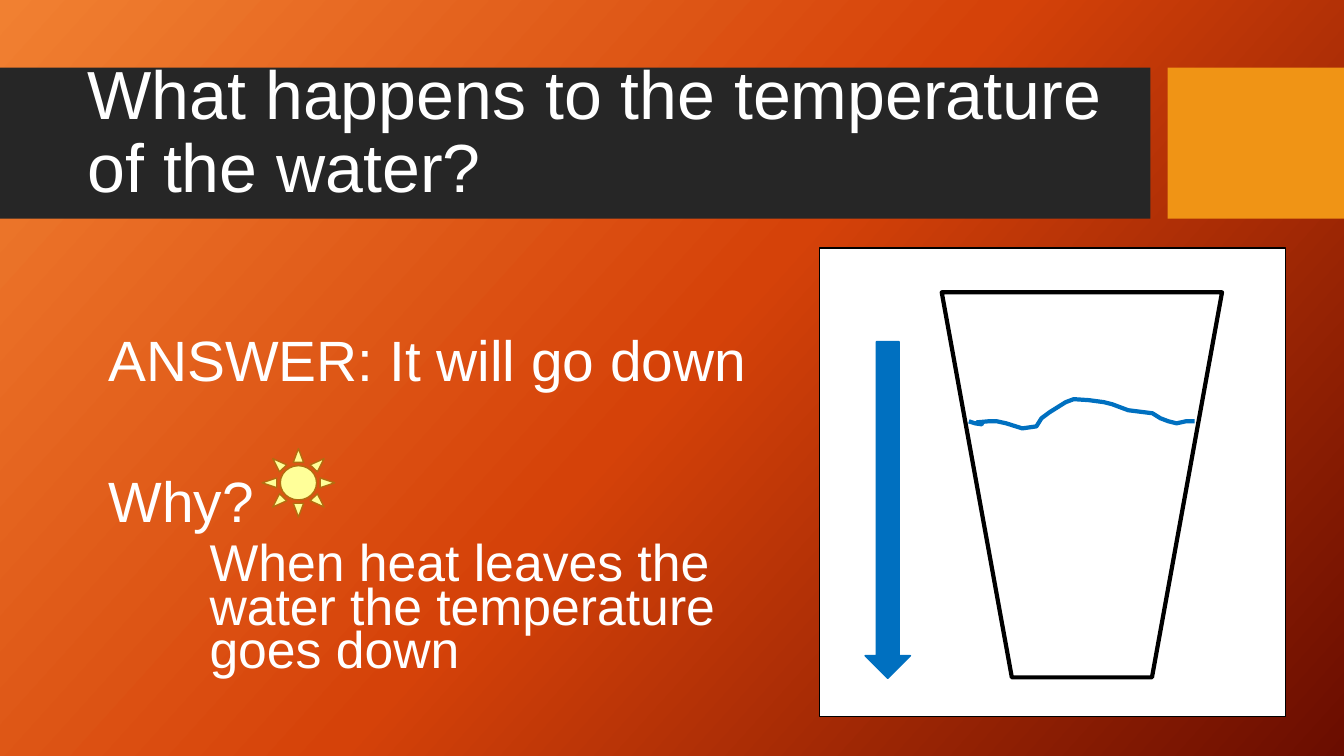
"""Build the slide about the temperature of cooling water."""
import copy
from dataclasses import dataclass
from typing import Optional

import pptx
import pptx.dml.color
import pptx.enum.shapes
import pptx.enum.text
import pptx.oxml.ns
import pptx.util

Inches = pptx.util.Inches
Pt = pptx.util.Pt
Kind = pptx.enum.shapes.MSO_SHAPE
Anchor = pptx.enum.text.MSO_ANCHOR

COLORS = {
    "glow": "F18031", "flame": "D54209", "ember": "6A0D00",
    "band": "262626", "accent": "F09415", "white": "FFFFFF",
    "black": "000000", "water": "0070C0", "sun": "FFFF99", "sun edge": "B26D10",
}
BACKGROUND_STOPS = [(0.0, "glow"), (0.5, "flame"), (1.0, "ember")]


@dataclass
class Figure:
    kind: Kind
    left: float
    top: float
    width: float
    height: float
    fill: Optional[str] = None
    line: Optional[str] = None
    weight: float = 1
    rotation: float = 0


@dataclass
class Line:
    text: str
    size: float
    spacing: float
    before: float = 0
    after: float = 0
    indent: float = 0


@dataclass
class TextBox:
    left: float
    top: float
    width: float
    height: float
    lines: list[Line]
    anchor: Anchor
    margin_top: float = 0.05
    margin_bottom: float = 0.05


BANNER = [
    Figure(Kind.RECTANGLE, 0, 0.67, 11.41, 1.5, "band"),
    Figure(Kind.RECTANGLE, 11.58, 0.67, 1.75, 1.5, "accent"),
]
TEXTS = [
    TextBox(0.77, 1.14, 10.51, 1.18, [
        Line("What happens to the temperature of the water?", 48.6, 0.9),
    ], Anchor.MIDDLE, margin_bottom=0.85),
    TextBox(0.98, 2.46, 7.3, 4.65, [
        Line("ANSWER: It will go down", 40.6, 0.7, after=6),
        Line("Why?", 40.6, 0.7, before=60, after=6),
        Line("When heat leaves the water the temperature goes down", 36.9, 0.7,
             before=5, after=6, indent=1),
    ], Anchor.TOP, margin_top=0.95),
]
GLASS = [
    Figure(Kind.RECTANGLE, 8.13, 2.46, 4.62, 4.65, "white", "black"),
    Figure(Kind.TRAPEZOID, 9.34, 2.9, 2.78, 3.82, None, "black", 3, 180),
]
WATER_SURFACE = [
    (9.61, 4.18), (9.67, 4.2), (9.74, 4.21), (9.69, 4.19), (9.8, 4.18),
    (9.89, 4.18), (9.98, 4.2), (10.14, 4.25), (10.28, 4.23), (10.33, 4.15),
    (10.41, 4.09), (10.49, 4.04), (10.57, 3.99), (10.65, 3.96), (10.8, 3.97),
    (10.95, 3.99), (11.03, 4.01), (11.11, 4.04), (11.19, 4.07), (11.43, 4.1),
    (11.51, 4.15), (11.59, 4.18), (11.67, 4.2), (11.76, 4.18), (11.85, 4.18),
]
SYMBOLS = [
    Figure(Kind.SUN, 2.6, 4.45, 0.72, 0.68, "sun", "sun edge"),
    Figure(Kind.DOWN_ARROW, 8.58, 3.39, 0.45, 3.34, "water", "water"),
]


def color(name: str) -> pptx.dml.color.RGBColor:
    """Return the named colour."""
    return pptx.dml.color.RGBColor.from_string(COLORS[name])


def paint_background(slide: pptx.slide.Slide) -> None:
    """Fill the background with the diagonal gradient."""
    fill = slide.background.fill
    fill.gradient()
    fill.gradient_angle = 318
    stop_list = next(slide.element.iter(pptx.oxml.ns.qn("a:gsLst")))
    stop_list.append(copy.deepcopy(stop_list[-1]))
    for stop, (position, name) in zip(fill.gradient_stops, BACKGROUND_STOPS):
        stop.position = position
        stop.color.rgb = color(name)


def style(shape: pptx.shapes.autoshape.Shape, fill: Optional[str],
          line: Optional[str], weight: float) -> None:
    """Set the fill and outline and drop the shadow."""
    shape.shadow.inherit = False
    if fill:
        shape.fill.solid()
        shape.fill.fore_color.rgb = color(fill)
    else:
        shape.fill.background()
    if line:
        shape.line.color.rgb = color(line)
        shape.line.width = Pt(weight)
    else:
        shape.line.fill.background()


def draw_figure(slide: pptx.slide.Slide, figure: Figure) -> None:
    """Draw one preset shape."""
    shape = slide.shapes.add_shape(
        figure.kind, Inches(figure.left), Inches(figure.top),
        Inches(figure.width), Inches(figure.height))
    shape.rotation = figure.rotation
    style(shape, figure.fill, figure.line, figure.weight)


def draw_water(slide: pptx.slide.Slide) -> None:
    """Draw the wavy surface of the water."""
    start, *rest = [(Inches(x), Inches(y)) for x, y in WATER_SURFACE]
    builder = slide.shapes.build_freeform(*start)
    builder.add_line_segments(rest, close=False)
    style(builder.convert_to_shape(), None, "water", 3)


def draw_text(slide: pptx.slide.Slide, box: TextBox) -> None:
    """Write the paragraphs of one text box."""
    frame = slide.shapes.add_textbox(
        Inches(box.left), Inches(box.top),
        Inches(box.width), Inches(box.height)).text_frame
    frame.word_wrap = True
    frame.vertical_anchor = box.anchor
    frame.margin_top = Inches(box.margin_top)
    frame.margin_bottom = Inches(box.margin_bottom)
    for index, line in enumerate(box.lines):
        paragraph = frame.add_paragraph() if index else frame.paragraphs[0]
        paragraph.text = line.text
        paragraph.line_spacing = line.spacing
        paragraph.space_before = Pt(line.before)
        paragraph.space_after = Pt(line.after)
        if line.indent:
            paragraph.level = 1
            properties = paragraph._p.get_or_add_pPr()
            properties.set("marL", str(Inches(line.indent)))
            properties.set("indent", "0")
        paragraph.font.name = "Arial"
        paragraph.font.size = Pt(line.size)
        paragraph.font.color.rgb = color("white")


def main() -> None:
    """Build and save the presentation."""
    presentation = pptx.Presentation()
    presentation.slide_width = Inches(13.33)
    presentation.slide_height = Inches(7.5)
    slide = presentation.slides.add_slide(presentation.slide_layouts[6])
    paint_background(slide)
    for figure in BANNER:
        draw_figure(slide, figure)
    for box in TEXTS:
        draw_text(slide, box)
    for figure in GLASS:
        draw_figure(slide, figure)
    draw_water(slide)
    for figure in SYMBOLS:
        draw_figure(slide, figure)
    presentation.save("out.pptx")


if __name__ == "__main__":
    main()
